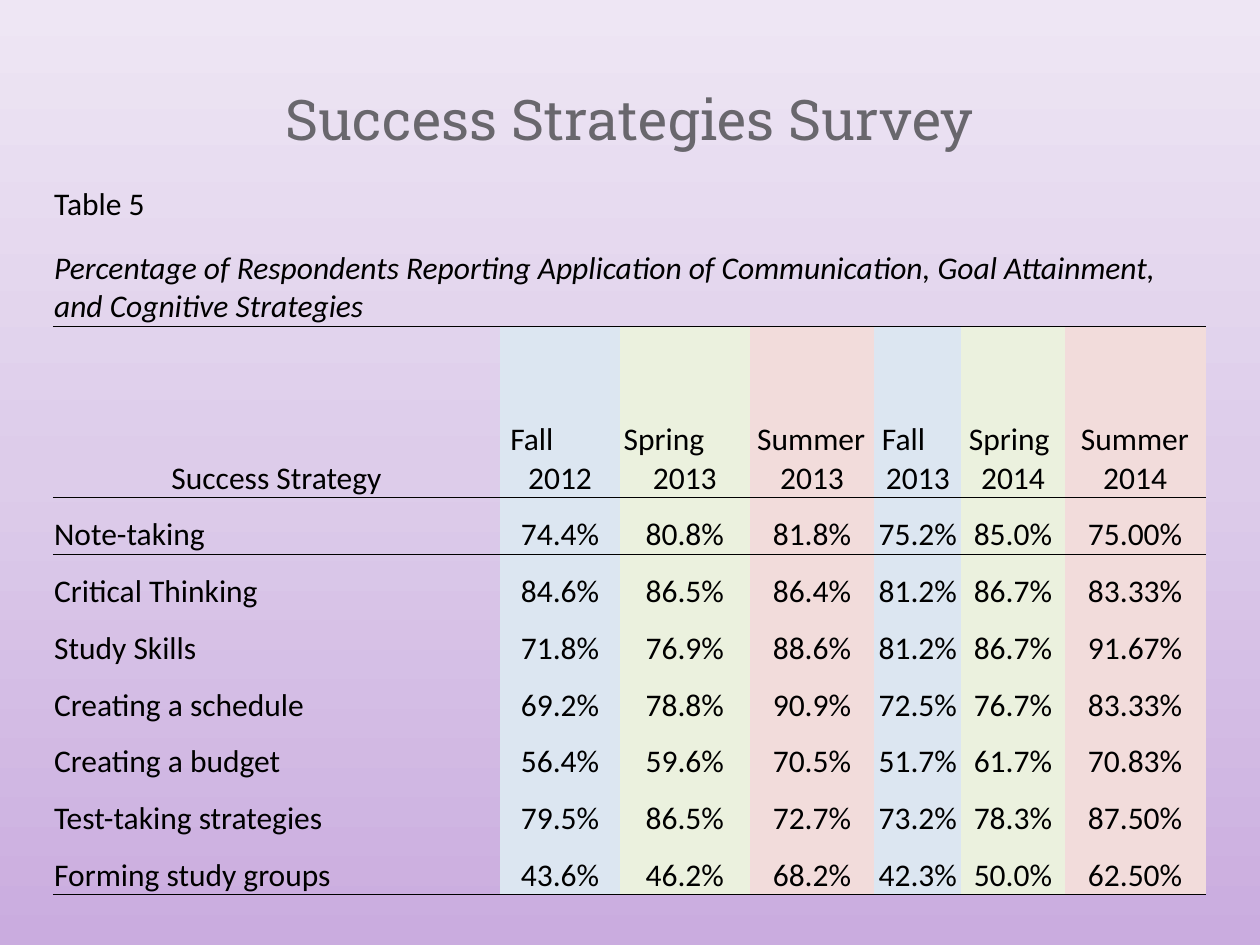
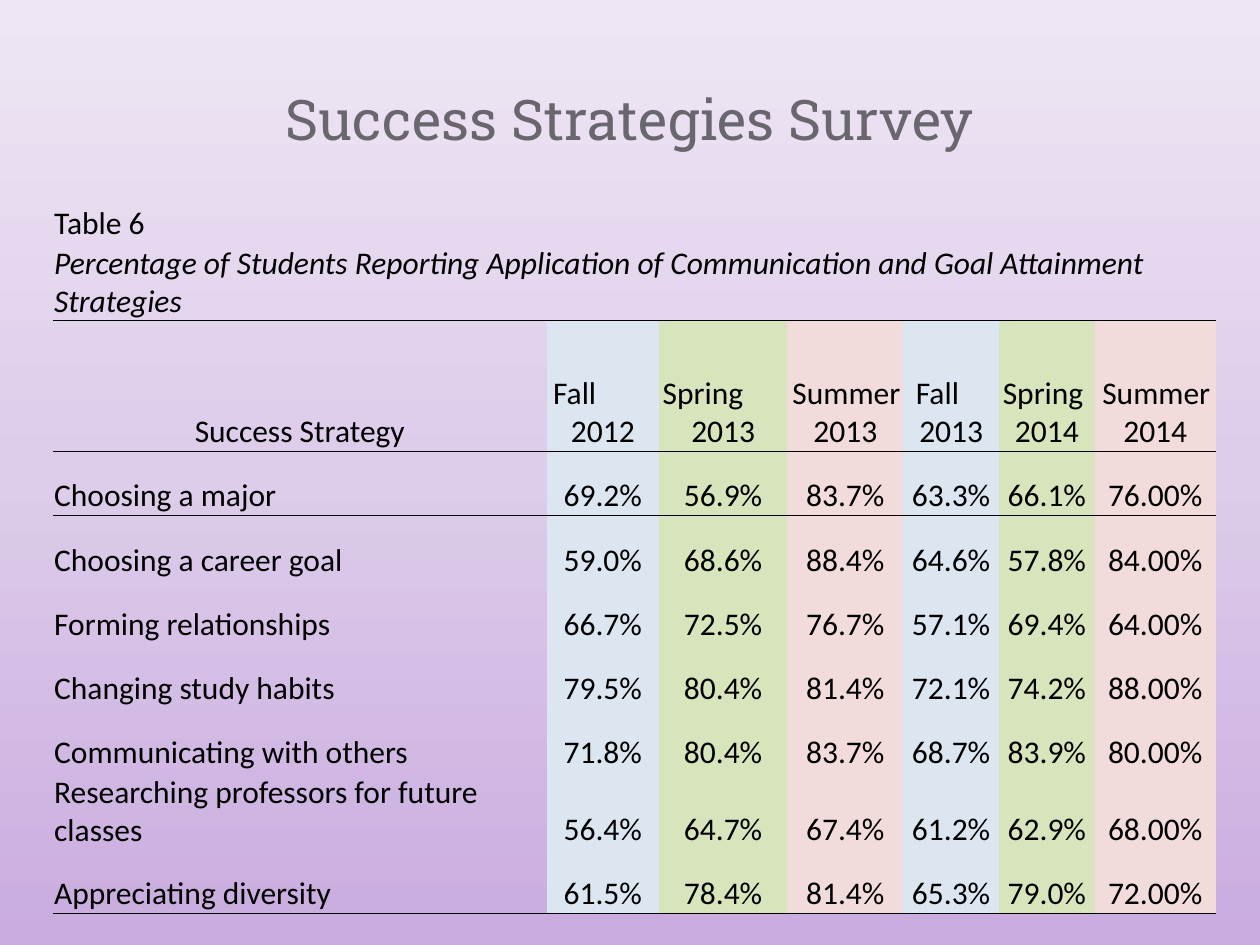
from pptx import Presentation
from pptx.dml.color import RGBColor
from pptx.enum.text import MSO_ANCHOR, PP_ALIGN
from pptx.oxml import parse_xml
from pptx.oxml.ns import nsdecls
from pptx.util import Inches, Pt

BLUE, PINK = "DCE6F1", "F2DCDB"
BLACK, GREY = "000000", "69676D"
PLAIN_STYLE = "{2D5ABB26-0587-4C30-8999-92F81FD0307C}"
GRADIENT = [(0, "CAACDF"), (50, "DDCCEA"), (100, "EEE6F4")]
TERMS = ["Fall 2012", "Spring 2013", "Summer 2013", "Fall 2013", "Spring 2014", "Summer 2014"]

SURVEYS = [
    {
        "label": "Table 5",
        "caption": "Percentage of Respondents Reporting Application of Communication, "
                   "Goal Attainment, and Cognitive Strategies",
        "top": 1.33,
        "widths": [3.55, 0.95, 1.03, 0.99, 0.69, 0.82, 1.12],
        "row_height": 0.45, "caption_height": 0.81, "header_height": 1.36,
        "spring": "EBF1DE",
        "season_indents": [0.07, 0.02, 0.05, 0.05, 0.05, 0.12],
        "results": [
            ("Note-taking", "74.4% 80.8% 81.8% 75.2% 85.0% 75.00%"),
            ("Critical Thinking", "84.6% 86.5% 86.4% 81.2% 86.7% 83.33%"),
            ("Study Skills", "71.8% 76.9% 88.6% 81.2% 86.7% 91.67%"),
            ("Creating a schedule", "69.2% 78.8% 90.9% 72.5% 76.7% 83.33%"),
            ("Creating a budget", "56.4% 59.6% 70.5% 51.7% 61.7% 70.83%"),
            ("Test-taking strategies", "79.5% 86.5% 72.7% 73.2% 78.3% 87.50%"),
            ("Forming study groups", "43.6% 46.2% 68.2% 42.3% 50.0% 62.50%"),
        ],
    },
    {
        "label": "Table 6",
        "caption": "Percentage of Students Reporting Application of Communication "
                   "and Goal Attainment Strategies",
        "top": 1.42,
        "widths": [3.92, 0.89, 1.02, 0.92, 0.76, 0.76, 0.96],
        "row_height": 0.51, "caption_height": 0.51, "header_height": 1.04,
        "spring": "D8E4BC",
        "season_indents": [0.04, 0.02, 0.03, 0.09, 0.02, 0.05],
        "results": [
            ("Choosing a major", "69.2% 56.9% 83.7% 63.3% 66.1% 76.00%"),
            ("Choosing a career goal", "59.0% 68.6% 88.4% 64.6% 57.8% 84.00%"),
            ("Forming relationships", "66.7% 72.5% 76.7% 57.1% 69.4% 64.00%"),
            ("Changing study habits", "79.5% 80.4% 81.4% 72.1% 74.2% 88.00%"),
            ("Communicating with others", "71.8% 80.4% 83.7% 68.7% 83.9% 80.00%"),
            ("Researching professors for future classes", "56.4% 64.7% 67.4% 61.2% 62.9% 68.00%"),
            ("Appreciating diversity", "61.5% 78.4% 81.4% 65.3% 79.0% 72.00%"),
        ],
    },
]


def color(value):
    return RGBColor.from_string(value)


def write(paragraph, text, size=18, font="Calibri", ink=BLACK, italic=False,
          align=PP_ALIGN.LEFT, indent=0):
    run = paragraph.add_run()
    run.text = text
    run.font.size = Pt(size)
    run.font.name = font
    run.font.italic = italic
    run.font.color.rgb = color(ink)
    paragraph.alignment = align
    if indent:
        properties = paragraph._p.get_or_add_pPr()
        properties.set("marL", str(Inches(indent)))
        properties.set("indent", "0")


prs = Presentation()
prs.slide_width, prs.slide_height = Inches(10), Inches(7.5)

stops = "".join(f'<a:gs pos="{pos * 1000}"><a:srgbClr val="{tint}"/></a:gs>' for pos, tint in GRADIENT)
master = prs.slide_master._element.cSld
if master.bg is not None:
    master.remove(master.bg)
master.insert(0, parse_xml(
    f'<p:bg {nsdecls("p", "a")}><p:bgPr><a:gradFill rotWithShape="1"><a:gsLst>{stops}</a:gsLst>'
    '<a:lin ang="16200000" scaled="0"/></a:gradFill><a:effectLst/></p:bgPr></p:bg>'))

for survey in SURVEYS:
    slide = prs.slides.add_slide(prs.slide_layouts[6])
    heading = slide.shapes.add_textbox(Inches(0.5), Inches(0.17), Inches(9), Inches(1.08)).text_frame
    heading.word_wrap = True
    heading.vertical_anchor = MSO_ANCHOR.BOTTOM
    write(heading.paragraphs[0], "Success Strategies Survey", size=32, font="Roboto Slab",
          ink=GREY, align=PP_ALIGN.CENTER)

    results = survey["results"]
    heights = [survey["row_height"], survey["caption_height"], survey["header_height"]]
    heights += [survey["row_height"]] * len(results)
    last_row = len(heights) - 1
    grid = slide.shapes.add_table(
        len(heights), len(survey["widths"]), Inches(0.42), Inches(survey["top"]),
        Inches(sum(survey["widths"])), Inches(sum(heights))).table
    grid.first_row = grid.horz_banding = False
    grid._tbl.tblPr[0].text = PLAIN_STYLE
    for column, width in zip(grid.columns, survey["widths"]):
        column.width = Inches(width)
    for row, height in zip(grid.rows, heights):
        row.height = Inches(height)

    season_fills = [BLUE, survey["spring"], PINK]
    for r in range(len(heights)):
        for c in range(len(survey["widths"])):
            cell = grid.cell(r, c)
            cell.vertical_anchor = MSO_ANCHOR.BOTTOM
            cell.margin_left = cell.margin_right = cell.margin_top = Inches(0.01)
            cell.margin_bottom = 0
            edges = [("lnT", r in (2, 3)), ("lnB", r in (1, 2, last_row))]
            for edge, ruled in edges:
                if ruled:
                    cell._tc.get_or_add_tcPr().append(parse_xml(
                        f'<a:{edge} {nsdecls("a")} w="6350"><a:solidFill><a:srgbClr val="{BLACK}"/>'
                        f'</a:solidFill></a:{edge}>'))
            if r >= 2 and c >= 1:
                cell.fill.solid()
                cell.fill.fore_color.rgb = color(season_fills[(c - 1) % 3])
            else:
                cell.fill.background()

    write(grid.cell(0, 0).text_frame.paragraphs[0], survey["label"])
    grid.cell(1, 0).merge(grid.cell(1, 6))
    write(grid.cell(1, 0).text_frame.paragraphs[0], survey["caption"], italic=True)
    write(grid.cell(2, 0).text_frame.paragraphs[0], "Success Strategy", align=PP_ALIGN.CENTER)
    for c, (term, indent) in enumerate(zip(TERMS, survey["season_indents"]), 1):
        season, year = term.split()
        term_text = grid.cell(2, c).text_frame
        write(term_text.paragraphs[0], season, indent=indent)
        write(term_text.add_paragraph(), year, align=PP_ALIGN.CENTER)
    for r, (strategy, shares) in enumerate(results, 3):
        write(grid.cell(r, 0).text_frame.paragraphs[0], strategy)
        for c, share in enumerate(shares.split(), 1):
            write(grid.cell(r, c).text_frame.paragraphs[0], share, align=PP_ALIGN.CENTER)

prs.save("out.pptx")
